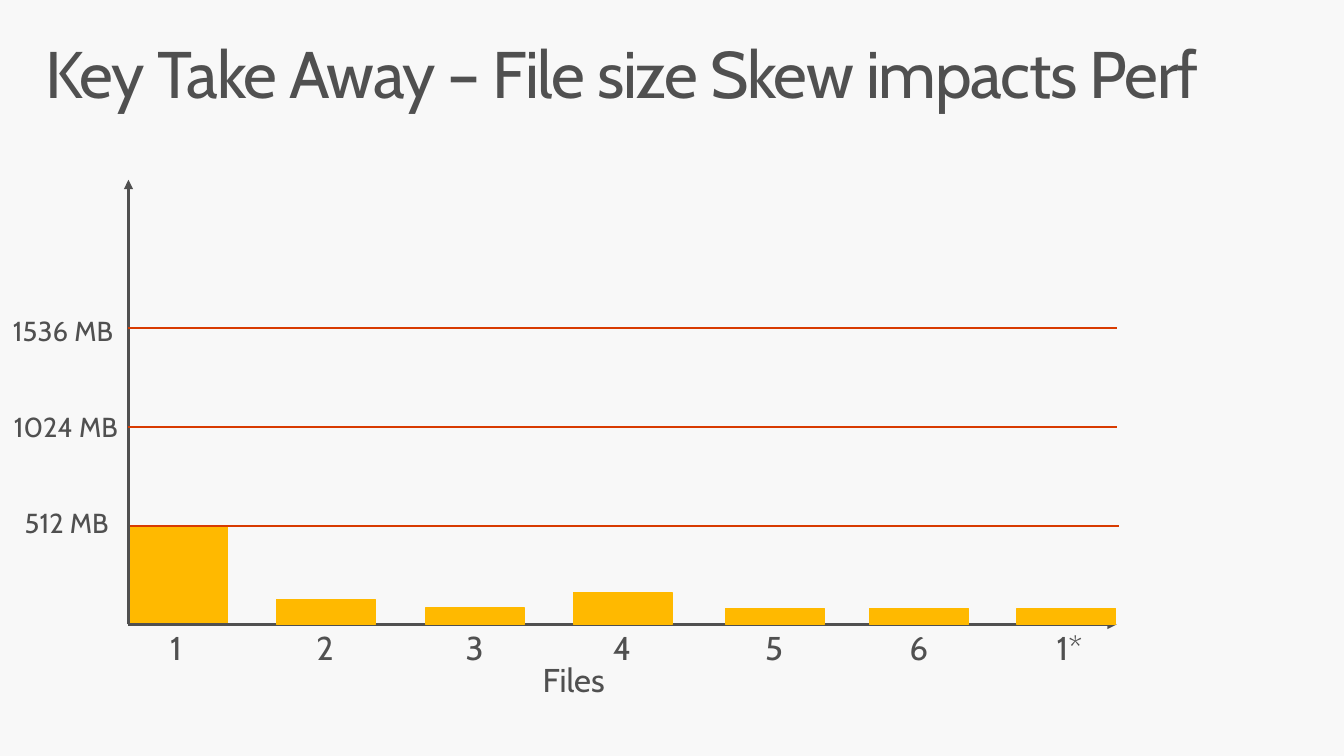
from pptx import Presentation
from pptx.dml.color import RGBColor
from pptx.enum import shapes, text
from pptx.oxml.ns import qn
from pptx.util import Pt

TITLE = "Key Take Away – File size Skew impacts Perf"
AXIS_TITLE = "Files"
# label, size in MB, left, width
FILES = [
    ("1", 512, 95, 70.6),
    ("2", 128, 201.6, 72),
    ("3", 85, 310.3, 72),
    ("4", 164, 417.6, 72),
    ("5", 82, 528.5, 72),
    ("6", 82, 633.6, 72),
    ("1*", 82, 741, 72),
]
# label, size in MB, label left, label width, line start
LEVELS = [
    ("512 MB", 512, 3.6, 111.6, 95),
    ("1024 MB", 1024, -4.3, 135.4, 93.6),
    ("1536 MB", 1536, -5, 135.4, 93.6),
]

BACKGROUND, INK, AMBER, RED = "F8F8F8", "505050", "FFB900", "D83B01"
FONT = "Cabin"
ORIGIN_X, ORIGIN_Y = 93.6, 455
AXIS_LENGTH, AXIS_HEIGHT = 720, 324
POINTS_PER_MB = 72 / 512
LABEL_PITCH = 69.84


def color(value):
    return RGBColor.from_string(value)


def add_text(slide, content, left, top, width, height, size=24,
             margins=(14.4, 11.5), align=text.PP_ALIGN.LEFT, after=6):
    box = slide.shapes.add_textbox(Pt(left), Pt(top), Pt(width), Pt(height))
    frame = box.text_frame
    side, end = map(Pt, margins)
    frame_format = {"word_wrap": True, "margin_left": side, "margin_right": side,
                    "margin_top": end, "margin_bottom": end}
    for name, value in frame_format.items():
        setattr(frame, name, value)
    paragraph = frame.paragraphs[0]
    paragraph_format = {"alignment": align, "line_spacing": 0.9,
                        "space_after": Pt(after)}
    for name, value in paragraph_format.items():
        setattr(paragraph, name, value)
    run = paragraph.add_run()
    run.text = content
    run.font.name, run.font.size = FONT, Pt(size)
    run.font.color.rgb = color(INK)
    return run


def add_line(slide, start, end, line_color, width, arrow=False):
    line = slide.shapes.add_connector(
        shapes.MSO_CONNECTOR.STRAIGHT, *map(Pt, (*start, *end)))
    line.line.color.rgb = color(line_color)
    line.line.width = Pt(width)
    properties = line._element.spPr
    if arrow:
        outline = line.line._get_or_add_ln()
        outline.append(outline.makeelement(qn("a:tailEnd"), {"type": "triangle"}))
    properties.append(properties.makeelement(qn("a:effectLst"), {}))


def add_bars(slide, files):
    for _, size, left, width in files:
        height = size * POINTS_PER_MB
        bar = slide.shapes.add_shape(
            shapes.MSO_SHAPE.RECTANGLE,
            Pt(left), Pt(ORIGIN_Y - height), Pt(width), Pt(height))
        bar.shadow.inherit = False
        bar.fill.solid()
        bar.fill.fore_color.rgb = bar.line.color.rgb = color(AMBER)
        bar.line.width = Pt(0.85)


def main():
    deck = Presentation()
    deck.slide_width, deck.slide_height = Pt(979.2), Pt(550.8)
    slide = deck.slides.add_slide(deck.slide_layouts[6])
    slide.background.fill.solid()
    slide.background.fill.fore_color.rgb = color(BACKGROUND)

    heading = add_text(slide, TITLE, 21.6, 23, 936, 72, size=48,
                       margins=(11.5, 7.2), after=0)
    heading.font._element.set("spc", "-100")

    # The first bar lies behind the axes, the others in front.
    add_bars(slide, FILES[:1])
    origin = (ORIGIN_X, ORIGIN_Y)
    for end in ((ORIGIN_X, ORIGIN_Y - AXIS_HEIGHT),
                (ORIGIN_X + AXIS_LENGTH, ORIGIN_Y)):
        add_line(slide, origin, end, INK, 2.25, arrow=True)
    for row, (label, size, left, width, start) in enumerate(LEVELS):
        y = ORIGIN_Y - size * POINTS_PER_MB
        add_line(slide, (start, y), (start + AXIS_LENGTH, y), RED, 1.5)
        add_text(slide, label, left, 360.7 - row * LABEL_PITCH, width, 45.4, size=20)
    add_bars(slide, FILES[1:])

    for label, _, left, _ in FILES:
        add_text(slide, label, left + 14.5, 448.8, 41 if len(label) == 1 else 58, 49.7)
    add_text(slide, AXIS_TITLE, 265, 472.3, 306, 49.7, align=text.PP_ALIGN.CENTER)

    deck.save("out.pptx")


if __name__ == "__main__":
    main()
